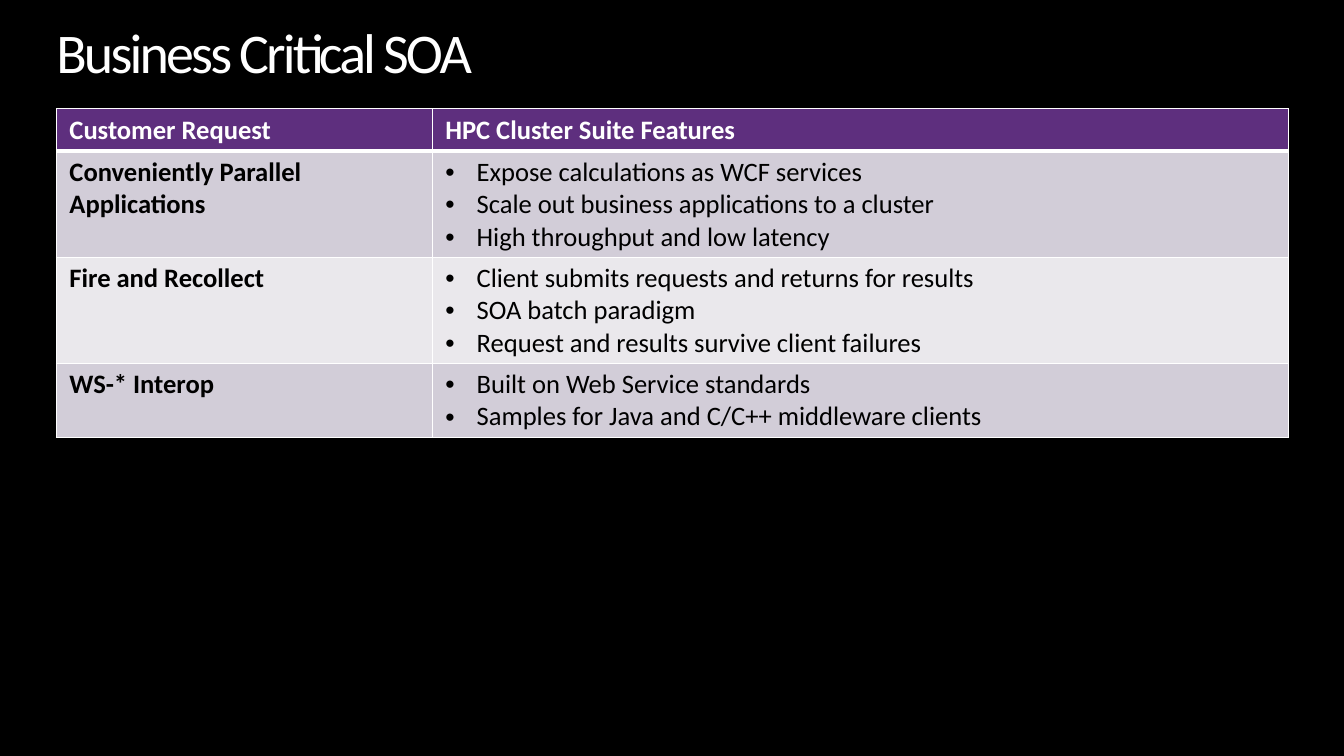
"""Build the Business Critical SOA slide with its table of requests and features."""
from lxml.etree import SubElement
from pptx import Presentation
from pptx.dml.color import RGBColor
from pptx.enum.text import MSO_ANCHOR, MSO_AUTO_SIZE, PP_ALIGN
from pptx.oxml import parse_xml
from pptx.oxml.ns import nsdecls, qn
from pptx.util import Cm, Pt

BLACK = RGBColor(0x00, 0x00, 0x00)
WHITE = RGBColor(0xFF, 0xFF, 0xFF)
PURPLE = RGBColor(0x5E, 0x2F, 0x7E)
LILAC = RGBColor(0xD2, 0xCD, 0xD8)
PALE = RGBColor(0xEA, 0xE8, 0xEC)
FONT = "Calibri"
LEFT, WIDTH = Cm(1.42), Cm(31.04)

ROWS = [
    ("Customer Request", ["HPC Cluster Suite Features"]),
    ("Conveniently Parallel Applications", [
        "Expose calculations as WCF services",
        "Scale out business applications to a cluster",
        "High throughput and low latency",
    ]),
    ("Fire and Recollect", [
        "Client submits requests and returns for results",
        "SOA batch paradigm",
        "Request and results survive client failures",
    ]),
    ("WS-* Interop", [
        "Built on Web Service standards",
        "Samples for Java and C/C++ middleware clients",
    ]),
]
ROW_HEIGHTS = [Cm(1.07), Cm(2.67), Cm(2.67), Cm(1.85)]
COLUMN_WIDTHS = [Cm(9.47), Cm(21.57)]


def style_cell(cell, fill, bottom_width):
    cell.margin_left = cell.margin_right = Cm(0.33)
    cell.margin_top = cell.margin_bottom = Cm(0.13)
    cell.vertical_anchor = MSO_ANCHOR.TOP
    for side in "LRTB":
        width = Pt(bottom_width if side == "B" else 1)
        cell._tc.get_or_add_tcPr().append(parse_xml(
            f'<a:ln{side} {nsdecls("a")} w="{width}"><a:solidFill>'
            f'<a:srgbClr val="{WHITE}"/></a:solidFill></a:ln{side}>'))
    cell.fill.solid()
    cell.fill.fore_color.rgb = fill


def write_cell(cell, lines, color, bold, bulleted):
    cell.text_frame.text = "\n".join(lines)
    for paragraph in cell.text_frame.paragraphs:
        if bulleted:
            properties = paragraph._p.get_or_add_pPr()
            properties.set("marL", str(Cm(0.79)))
            properties.set("indent", str(-Cm(0.79)))
            SubElement(properties, qn("a:buFont"), typeface="Arial")
            SubElement(properties, qn("a:buChar"), char="•")
        paragraph.font.name = FONT
        paragraph.font.size = Pt(19)
        paragraph.font.bold = bold
        paragraph.font.color.rgb = color


prs = Presentation()
prs.slide_width, prs.slide_height = Cm(33.86), Cm(19.05)
slide = prs.slides.add_slide(prs.slide_layouts[5])
slide.background.fill.solid()
slide.background.fill.fore_color.rgb = BLACK

title = slide.shapes.title
title.left, title.top, title.width, title.height = LEFT, Cm(0.64), WIDTH, Cm(1.55)
heading = title.text_frame
heading.text = "Business Critical SOA"
heading.margin_left = heading.margin_right = heading.margin_top = heading.margin_bottom = 0
heading.vertical_anchor = MSO_ANCHOR.TOP
heading.word_wrap = True
heading.auto_size = MSO_AUTO_SIZE.SHAPE_TO_FIT_TEXT
heading_line = heading.paragraphs[0]
heading_line.alignment = PP_ALIGN.LEFT
heading_line.line_spacing = 0.9
heading_line.font.name = FONT
heading_line.font.size = Pt(40)
heading_line.font.color.rgb = WHITE
heading_line.runs[0]._r.get_or_add_rPr().set("spc", "-200")

features = slide.shapes.add_table(
    len(ROWS), len(COLUMN_WIDTHS), LEFT, Cm(2.74), WIDTH, sum(ROW_HEIGHTS)).table
for column, width in zip(features.columns, COLUMN_WIDTHS):
    column.width = width
for index, (request, answers) in enumerate(ROWS):
    features.rows[index].height = ROW_HEIGHTS[index]
    is_header = index == 0
    fill = PURPLE if is_header else (PALE, LILAC)[index % 2]
    color = WHITE if is_header else BLACK
    request_cell, answer_cell = features.rows[index].cells
    for cell in (request_cell, answer_cell):
        style_cell(cell, fill, 3 if is_header else 1)
    write_cell(request_cell, [request], color, True, False)
    write_cell(answer_cell, answers, color, is_header, not is_header)

prs.save("out.pptx")
